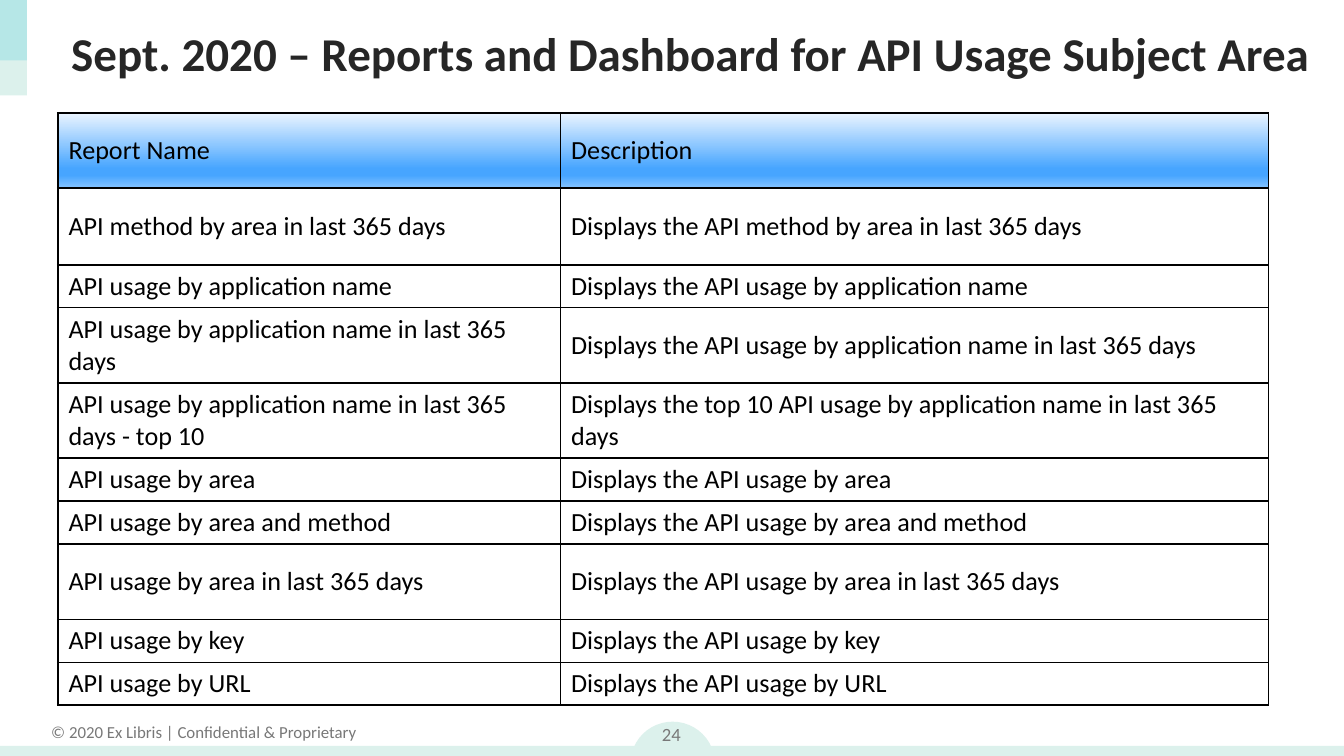
from lxml.etree import SubElement
from pptx import Presentation
from pptx.dml.color import RGBColor
from pptx.enum.shapes import MSO_SHAPE
from pptx.enum.text import MSO_ANCHOR, PP_ALIGN
from pptx.oxml.ns import qn
from pptx.util import Inches, Pt

# Content
TITLE = "Sept. 2020 – Reports and Dashboard for API Usage Subject Area"
FOOTER = "© 2020 Ex Libris | Confidential & Proprietary"
NUMBER = "24"
TALL, LOW = 0.56, 0.32
ROWS = [  # height, name, description
    (TALL, "Report Name", "Description"),
    (0.57, "API method by area in last 365 days",
     "Displays the API method by area in last 365 days"),
    (LOW, "API usage by application name",
     "Displays the API usage by application name"),
    (TALL, "API usage by application name in last 365 days",
     "Displays the API usage by application name in last 365 days"),
    (TALL, "API usage by application name in last 365 days - top 10",
     "Displays the top 10 API usage by application name in last 365 days"),
    (LOW, "API usage by area", "Displays the API usage by area"),
    (LOW, "API usage by area and method",
     "Displays the API usage by area and method"),
    (TALL, "API usage by area in last 365 days",
     "Displays the API usage by area in last 365 days"),
    (LOW, "API usage by key", "Displays the API usage by key"),
    (LOW, "API usage by URL", "Displays the API usage by URL"),
]
COLS = [3.74, 5.27]

# Look
COLORS = {"mint": "DCF1EC", "teal": "50CFDA", "gray": "787878",
          "dark": "262626", "black": "000000"}
HEAD = [(0, "EBF5FF"), (74, "47A5FF"), (83, "47A5FF"), (100, "85C3FF")]
DECOR = [  # shape, box, color, opacity in percent
    (MSO_SHAPE.OVAL, (4.69, 5.37, 0.63, 0.63), "mint", 100),
    (MSO_SHAPE.RECTANGLE, (0, 5.55, 10, 0.11), "mint", 100),
    (MSO_SHAPE.RECTANGLE, (0, 0, 0.2, 0.71), "mint", 100),
    (MSO_SHAPE.RECTANGLE, (0, 0, 0.2, 0.45), "teal", 27),
]
FONTS = {
    "title": {"size": Pt(25.2), "bold": True, "name": "Calibri"},
    "cell": {"size": Pt(14), "bold": False, "name": "Calibri"},
    "foot": {"size": Pt(9), "name": "Calibri"},
    "num": {"size": Pt(10), "name": "Calibri"},
}
PAD = {"margin_left": Inches(0.08), "margin_right": Inches(0.08),
       "margin_top": Inches(0.04), "margin_bottom": Inches(0.04),
       "vertical_anchor": MSO_ANCHOR.MIDDLE}


def apply(item, values):
    for key, value in values.items():
        setattr(item, key, value)


def write(frame, text, font, color, align=PP_ALIGN.LEFT):
    para = frame.paragraphs[0]
    para.alignment = align
    run = para.add_run()
    run.text = text
    apply(run.font, FONTS[font])
    run.font.color.rgb = RGBColor.from_string(COLORS[color])


def border(cell):
    props = cell._tc.get_or_add_tcPr()
    for side in ("lnL", "lnR", "lnT", "lnB"):
        line = SubElement(props, qn(f"a:{side}"), w=str(Pt(1)))
        fill = SubElement(line, qn("a:solidFill"))
        SubElement(fill, qn("a:srgbClr"), val=COLORS["black"])


def shade(cell):
    grad = SubElement(cell._tc.get_or_add_tcPr(), qn("a:gradFill"))
    stops = SubElement(grad, qn("a:gsLst"))
    for pos, color in HEAD:
        stop = SubElement(stops, qn("a:gs"), pos=str(pos * 1000))
        SubElement(stop, qn("a:srgbClr"), val=color)
    SubElement(grad, qn("a:lin"), ang=str(90 * 60000), scaled="0")


# Slide in 16:9
deck = Presentation()
deck.slide_width, deck.slide_height = Inches(10), Inches(10 * 9 / 16)
slide = deck.slides.add_slide(deck.slide_layouts[5])
shapes = slide.shapes

# Corner and footer shapes
for kind, box, color, alpha in DECOR:
    shape = shapes.add_shape(kind, *map(Inches, box))
    shape.shadow.inherit = False
    shape.fill.solid()
    shape.fill.fore_color.rgb = RGBColor.from_string(COLORS[color])
    shape.line.fill.background()
    if alpha < 100:
        tint = shape._element.spPr.find(".//" + qn("a:srgbClr"))
        SubElement(tint, qn("a:alpha"), val=str(alpha * 1000))

# Footer text and slide number
foot = shapes.add_textbox(*map(Inches, (0.27, 5.32, 2.49, 0.25))).text_frame
foot.word_wrap = False
write(foot, FOOTER, "foot", "gray", PP_ALIGN.CENTER)
num = shapes.add_textbox(*map(Inches, (4.7, 5.26, 0.59, 0.4))).text_frame
apply(num, {"word_wrap": True, "vertical_anchor": MSO_ANCHOR.MIDDLE})
write(num, NUMBER, "num", "gray", PP_ALIGN.CENTER)

# Title
title = shapes.title
apply(title, dict(zip(("left", "top", "width", "height"),
                      map(Inches, (0.43, 0.08, 9.45, 0.63)))))
apply(title.text_frame, {"word_wrap": True, "margin_right": 0,
                         "vertical_anchor": MSO_ANCHOR.MIDDLE})
write(title.text_frame, TITLE, "title", "dark")

# Report table
high = sum(row[0] for row in ROWS)
table = shapes.add_table(len(ROWS), len(COLS), Inches(0.43), Inches(0.84),
                         Inches(sum(COLS)), Inches(high)).table
apply(table, {"first_row": False, "horz_banding": False})
for col, width in zip(table.columns, COLS):
    col.width = Inches(width)
for r, (height, *texts) in enumerate(ROWS):
    table.rows[r].height = Inches(height)
    for c, text in enumerate(texts):
        cell = table.cell(r, c)
        apply(cell, PAD)
        write(cell.text_frame, text, "cell", "black")
        border(cell)
        if r == 0:
            shade(cell)
        else:
            cell.fill.background()

deck.save("out.pptx")
